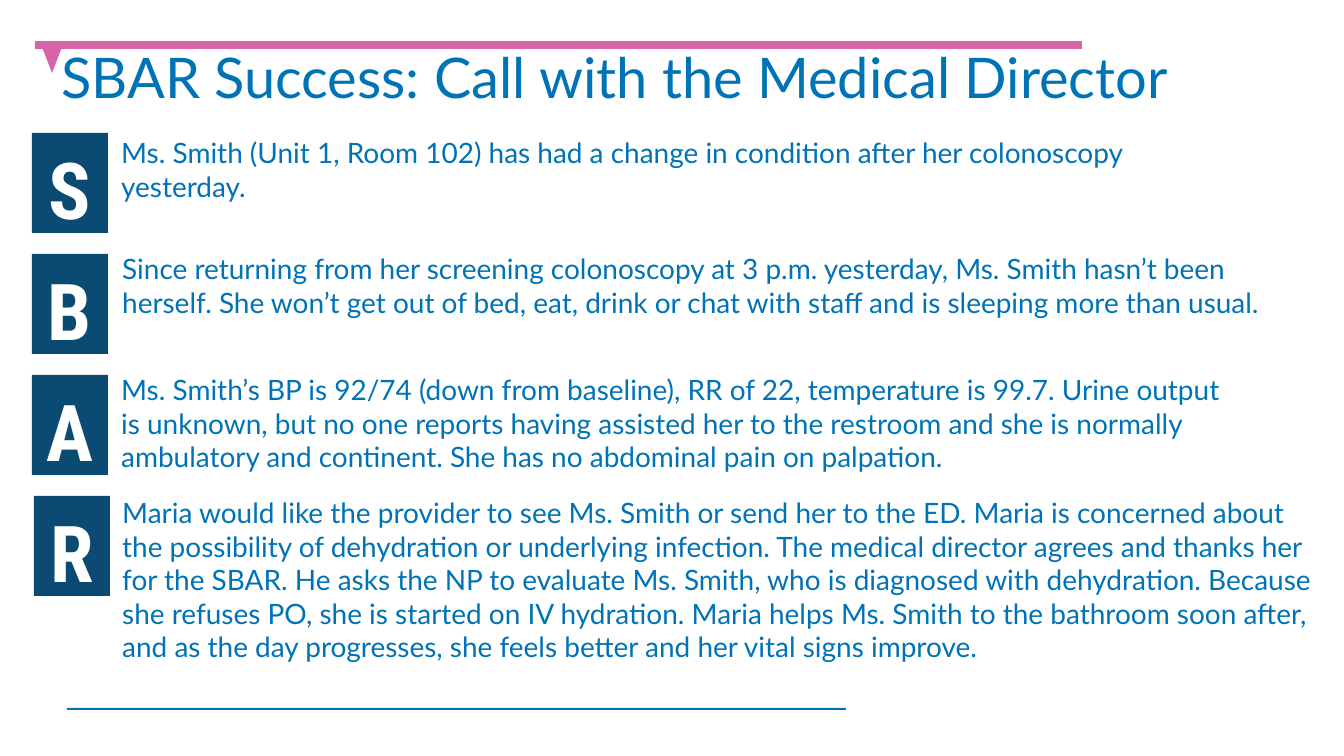
from dataclasses import dataclass

from pptx import Presentation
from pptx import util as u
from pptx.dml.color import RGBColor
from pptx.enum import shapes, text

EMU_PER_PX = 914400 / 134.4


@dataclass(frozen=True)
class Theme:
    blue: str = "0073B6"
    navy: str = "0B4A72"
    pink: str = "D664A7"
    white: str = "FFFFFF"
    body_font: str = "Lato"
    letter_font: str = "Roboto Condensed"
    title_size: int = 30
    body_size: int = 15
    letter_size: int = 42


THEME = Theme()
TITLE = "SBAR Success: Call with the Medical Director"
FIRST_TILE_TOP, TILE_PITCH = 133, 121

# letter, tile left, text box (left, top, width, height), wording
SECTIONS = [
    ("S", 32, (108, 129, 1055, 86),
     "Ms. Smith (Unit 1, Room 102) has had a change in condition after her "
     "colonoscopy yesterday."),
    ("B", 32, (109, 245, 1184, 86),
     "Since returning from her screening colonoscopy at 3 p.m. yesterday, "
     "Ms. Smith hasn’t been herself. She won’t get out of bed, eat, drink or "
     "chat with staff and is sleeping more than usual."),
    ("A", 32, (108, 366, 1128, 112),
     "Ms. Smith’s BP is 92/74 (down from baseline), RR of 22, temperature is "
     "99.7. Urine output is unknown, but no one reports having assisted her to "
     "the restroom and she is normally ambulatory and continent. She has no "
     "abdominal pain on palpation."),
    ("R", 34, (109, 489, 1218, 194),
     "Maria would like the provider to see Ms. Smith or send her to the ED. "
     "Maria is concerned about the possibility of dehydration or underlying "
     "infection. The medical director agrees and thanks her for the SBAR. He "
     "asks the NP to evaluate Ms. Smith, who is diagnosed with dehydration. "
     "Because she refuses PO, she is started on IV hydration. Maria helps "
     "Ms. Smith to the bathroom soon after, and as the day progresses, she "
     "feels better and her vital signs improve."),
]


def px(length):
    return u.Emu(round(length * EMU_PER_PX))


def format_run(run, font, size, color, bold=False):
    run.font.name = font
    run.font.size = u.Pt(size)
    run.font.bold = bold
    run.font.color.rgb = RGBColor.from_string(color)


def add_block(slide, kind, box, color):
    """Add a flat preset shape without an outline."""
    shape = slide.shapes.add_shape(kind, *map(px, box))
    shape.shadow.inherit = False
    shape.fill.solid()
    shape.fill.fore_color.rgb = RGBColor.from_string(color)
    shape.line.fill.background()
    return shape


def add_text(slide, box, wording, size, line_spacing=1.0):
    frame = slide.shapes.add_textbox(*map(px, box)).text_frame
    frame.word_wrap = True
    frame.text = wording
    paragraph = frame.paragraphs[0]
    paragraph.line_spacing = line_spacing
    format_run(paragraph.runs[0], THEME.body_font, size, THEME.blue)


def add_letter_tile(slide, left, top, letter):
    tile = add_block(slide, shapes.MSO_SHAPE.RECTANGLE, (left, top, 76, 100), THEME.navy)
    frame = tile.text_frame
    frame.margin_left = frame.margin_right = frame.margin_bottom = 0
    frame.margin_top = px(10)
    frame.vertical_anchor = text.MSO_ANCHOR.MIDDLE
    frame.text = letter
    paragraph = frame.paragraphs[0]
    paragraph.alignment = text.PP_ALIGN.CENTER
    format_run(paragraph.runs[0], THEME.letter_font, THEME.letter_size, THEME.white, bold=True)


def add_decoration(slide):
    rectangle = shapes.MSO_SHAPE.RECTANGLE
    add_block(slide, rectangle, (67, 708, 779, 2), THEME.blue)
    add_block(slide, rectangle, (35, 41, 1047, 8), THEME.pink)
    pointer = add_block(slide, shapes.MSO_SHAPE.ISOSCELES_TRIANGLE, (42, 47, 20, 26), THEME.pink)
    pointer.rotation = 180


def main():
    presentation = Presentation()
    presentation.slide_width = px(1344)
    presentation.slide_height = px(756)
    slide = presentation.slides.add_slide(presentation.slide_layouts[6])

    add_decoration(slide)
    add_text(slide, (48, 44, 1214, 75), TITLE, THEME.title_size, line_spacing=0.9)
    for index, (letter, left, box, wording) in enumerate(SECTIONS):
        add_letter_tile(slide, left, FIRST_TILE_TOP + index * TILE_PITCH, letter)
        add_text(slide, box, wording, THEME.body_size)

    presentation.save("out.pptx")


if __name__ == "__main__":
    main()
